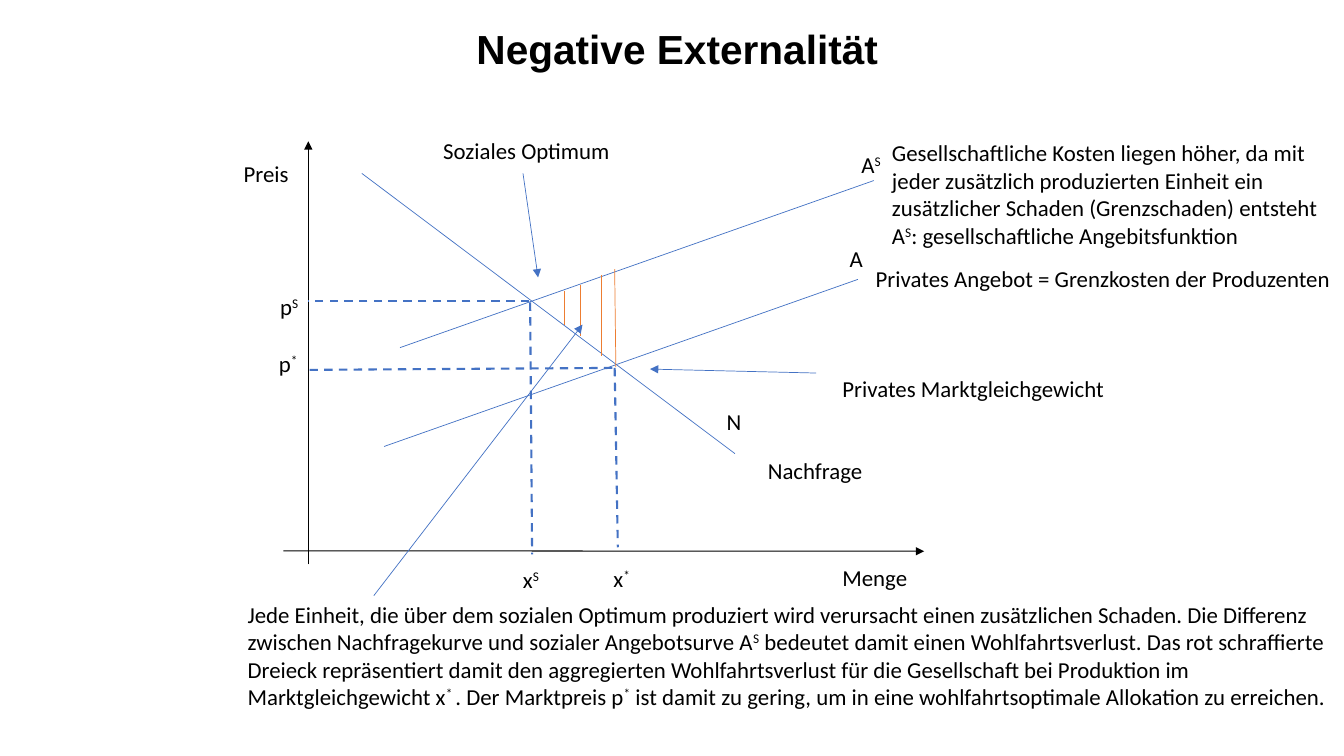
from typing import Any, NamedTuple

from lxml.etree import SubElement
from pptx import Presentation
from pptx.dml.color import RGBColor
from pptx.enum.dml import MSO_LINE
from pptx.enum.shapes import MSO_CONNECTOR
from pptx.enum.text import MSO_ANCHOR, MSO_AUTO_SIZE, PP_ALIGN
from pptx.oxml.ns import qn
from pptx.util import Cm, Pt

BLACK, BLUE, ORANGE = "000000", "4472C4", "ED7D31"
LABEL_HEIGHT = 0.97
LABEL_FONT = {"name": "Calibri", "size": Pt(16.3)}
TITLE_FONT = {"name": "Arial", "size": Pt(29), "bold": True}
TITLE_FRAME = {
    "auto_size": MSO_AUTO_SIZE.NONE,
    "vertical_anchor": MSO_ANCHOR.MIDDLE,
    "word_wrap": True,
}


class Stroke(NamedTuple):
    color: str
    width: float
    dashed: bool = False
    arrow: bool = False


class Segment(NamedTuple):
    x1: float
    y1: float
    x2: float
    y2: float
    stroke: Stroke


class Label(NamedTuple):
    """Text in which every second part between bars is superscript."""
    text: str
    left: float
    top: float
    width: float
    height: float = LABEL_HEIGHT
    wrap: bool = False


AXIS = Stroke(BLACK, 0.75, arrow=True)
CURVE = Stroke(BLUE, 0.5)
POINTER = Stroke(BLUE, 0.5, arrow=True)
GUIDE = Stroke(BLUE, 1.5, dashed=True)
HATCH = Stroke(ORANGE, 0.5)

SEGMENTS = [
    Segment(7.77, 14.22, 7.77, 3.56, AXIS),
    Segment(7.14, 13.88, 23.29, 13.89, AXIS),
    Segment(9.12, 4.37, 18.52, 11.43, CURVE),
    Segment(9.68, 11.25, 21.62, 7.04, CURVE),
    Segment(10.08, 8.76, 22.02, 4.55, CURVE),
    Segment(14.22, 7.34, 14.22, 8.18, HATCH),
    Segment(14.63, 7.19, 14.63, 8.46, HATCH),
    Segment(15.16, 6.93, 15.16, 8.97, HATCH),
    Segment(15.49, 6.78, 15.52, 9.25, HATCH),
    Segment(20.57, 9.4, 16.38, 9.3, POINTER),
    Segment(13.18, 4.37, 13.56, 6.99, POINTER),
    Segment(9.42, 15.01, 14.68, 8.18, POINTER),
    Segment(13.36, 7.62, 13.41, 13.97, GUIDE),
    Segment(15.49, 9.27, 15.57, 13.79, GUIDE),
    Segment(7.8, 9.32, 15.57, 9.27, GUIDE),
    Segment(13.34, 7.59, 7.77, 7.59, GUIDE),
]

LABELS = [
    Label("Preis", 5.89, 3.91, 1.65),
    Label("Menge", 20.98, 14.07, 2.16),
    Label("N", 18.06, 10.16, 0.89),
    Label("Nachfrage", 19.1, 11.38, 2.92),
    Label("A", 21.16, 6.05, 0.86),
    Label("A|S", 21.46, 3.68, 1.04),
    Label("p|S", 6.81, 7.24, 0.99),
    Label("p|*", 6.78, 8.69, 1.02),
    Label("x|S", 12.93, 14.12, 0.94),
    Label("x|*", 15.21, 14.1, 0.97),
    Label("Soziales Optimum", 10.92, 3.33, 4.75),
    Label("Privates Marktgleichgewicht", 20.98, 9.32, 7.19),
    Label("Privates Angebot = Grenzkosten der Produzenten", 21.82, 6.55, 12.12),
    Label(
        "Gesellschaftliche Kosten liegen höher, da mit jeder zusätzlich "
        "produzierten Einheit ein zusätzlicher Schaden (Grenzschaden) entsteht\n"
        "A|S|: gesellschaftliche Angebitsfunktion",
        22.23, 3.38, 11.73, 2.97, wrap=True,
    ),
    Label(
        "Jede Einheit, die über dem sozialen Optimum produziert wird verursacht "
        "einen zusätzlichen Schaden. Die Differenz zwischen Nachfragekurve und "
        "sozialer Angebotsurve A|S| bedeutet damit einen Wohlfahrtsverlust. Das "
        "rot schraffierte Dreieck repräsentiert damit den aggregierten "
        "Wohlfahrtsverlust für die Gesellschaft bei Produktion im "
        "Marktgleichgewicht x|* |. Der Marktpreis p|*| ist damit zu gering, um in "
        "eine wohlfahrtsoptimale Allokation zu erreichen.",
        5.99, 15.01, 27.86, 3.18, wrap=True,
    ),
]


def rgb(color: str) -> RGBColor:
    return RGBColor.from_string(color)


def apply_format(target: Any, values: dict[str, Any]) -> None:
    for attribute, value in values.items():
        setattr(target, attribute, value)


def add_run(paragraph: Any, text: str, font: dict[str, Any], raised: bool = False) -> None:
    run = paragraph.add_run()
    run.text = text
    apply_format(run.font, font)
    run.font.color.rgb = rgb(BLACK)
    if raised:
        run._r.get_or_add_rPr().set("baseline", "30000")


def set_title(slide: Any, text: str) -> None:
    title = slide.shapes.title
    place = {"left": Cm(5.66), "top": Cm(0.18), "width": Cm(22.83), "height": Cm(2.06)}
    apply_format(title, place)
    apply_format(title.text_frame, TITLE_FRAME)
    paragraph = title.text_frame.paragraphs[0]
    paragraph.alignment = PP_ALIGN.CENTER
    add_run(paragraph, text, TITLE_FONT)


def draw_segment(slide: Any, segment: Segment) -> None:
    ends = (Cm(value) for value in segment[:4])
    connector = slide.shapes.add_connector(MSO_CONNECTOR.STRAIGHT, *ends)
    line, stroke = connector.line, segment.stroke
    line.color.rgb = rgb(stroke.color)
    line.width = Pt(stroke.width)
    if stroke.dashed:
        line.dash_style = MSO_LINE.DASH
    properties = connector._element.spPr
    if stroke.arrow:
        SubElement(properties.find(qn("a:ln")), qn("a:tailEnd"), type="triangle")
    SubElement(properties, qn("a:effectLst"))


def draw_label(slide: Any, label: Label) -> None:
    box = slide.shapes.add_textbox(
        Cm(label.left), Cm(label.top), Cm(label.width), Cm(label.height)
    )
    frame = box.text_frame
    frame.word_wrap = label.wrap
    if not label.wrap:
        frame.auto_size = MSO_AUTO_SIZE.SHAPE_TO_FIT_TEXT
    for index, text in enumerate(label.text.split("\n")):
        paragraph = frame.add_paragraph() if index else frame.paragraphs[0]
        for position, part in enumerate(text.split("|")):
            add_run(paragraph, part, LABEL_FONT, raised=position % 2 == 1)


def main() -> None:
    presentation = Presentation()
    presentation.slide_width = Cm(33.87)
    presentation.slide_height = Cm(19.05)
    slide = presentation.slides.add_slide(presentation.slide_layouts[5])
    set_title(slide, "Negative Externalität")
    for segment in SEGMENTS:
        draw_segment(slide, segment)
    for label in LABELS:
        draw_label(slide, label)
    presentation.save("out.pptx")


if __name__ == "__main__":
    main()
